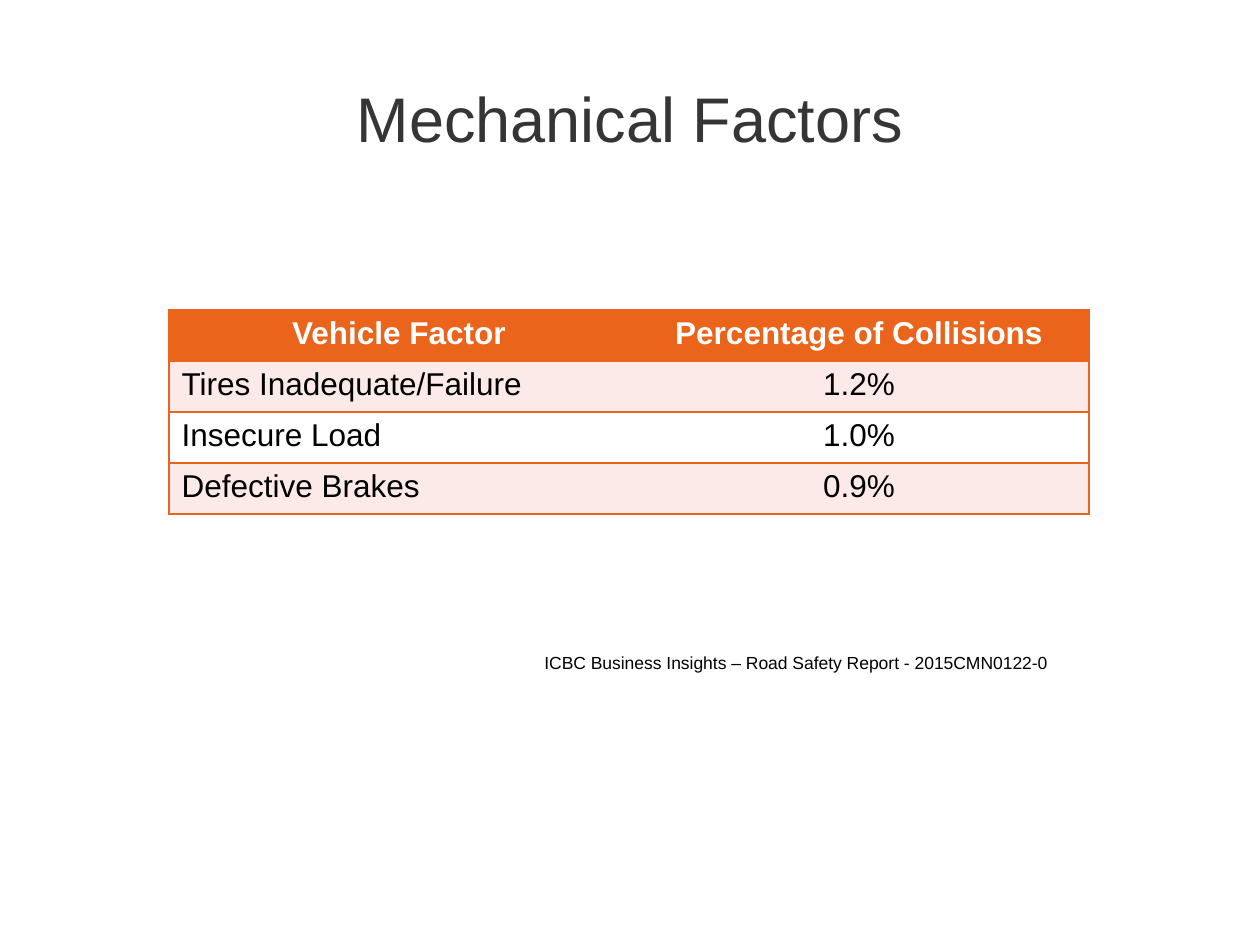
"""Build the Mechanical Factors slide with its collision table."""
from dataclasses import dataclass
from typing import NamedTuple

from lxml.etree import SubElement
from pptx import Presentation
from pptx.dml.color import RGBColor as Color
from pptx.enum.text import MSO_ANCHOR as Anchor, MSO_AUTO_SIZE as AutoSize, PP_ALIGN as Align
from pptx.oxml.ns import qn
from pptx.util import Emu, Pt

PIXELS_PER_INCH = 126


class Area(NamedTuple):
    left: int
    top: int
    width: int
    height: int


@dataclass(frozen=True)
class Theme:
    font: str = "Arial"
    title: str = "353535"
    accent: str = "EB641B"
    band: str = "FBEAE8"
    white: str = "FFFFFF"
    black: str = "000000"
    title_size: int = 36
    table_size: int = 18
    source_size: int = 10
    border: int = 1


@dataclass(frozen=True)
class Factor:
    name: str
    share: str


THEME = Theme()
HEADER = Factor("Vehicle Factor", "Percentage of Collisions")
FACTORS = [
    Factor("Tires Inadequate/Failure", "1.2%"),
    Factor("Insecure Load", "1.0%"),
    Factor("Defective Brakes", "0.9%"),
]
TITLE_AREA = Area(63, 38, 1134, 158)
TABLE_AREA = Area(169, 310, 920, 204)
SOURCE_AREA = Area(532, 646, 543, 34)


def px(length: int) -> Emu:
    return Emu(round(length * 914400 / PIXELS_PER_INCH))


def place(shape, area: Area) -> None:
    shape.left, shape.top, shape.width, shape.height = map(px, area)


def write(frame, text: str, size: int, color: str, align: Align, bold: bool = False) -> None:
    frame.text = text
    para = frame.paragraphs[0]
    para.alignment = align
    font = para.font
    font.name, font.size, font.bold = THEME.font, Pt(size), bold
    font.color.rgb = Color.from_string(color)


def add_borders(cell, visible: str) -> None:
    properties = cell._tc.get_or_add_tcPr()
    for side in "LRTB":
        line = SubElement(properties, qn(f"a:ln{side}"), w=str(Pt(THEME.border)))
        if side in visible:
            fill = SubElement(line, qn("a:solidFill"))
            SubElement(fill, qn("a:srgbClr"), val=THEME.accent)
        else:
            SubElement(line, qn("a:noFill"))


def fill_cell(cell, text: str, row: int, column: int) -> None:
    header = row == 0
    centred = header or column == 1
    write(cell.text_frame, text, THEME.table_size,
          THEME.white if header else THEME.black,
          Align.CENTER if centred else Align.LEFT, bold=header)
    add_borders(cell, "TB" + "LR"[column])
    cell.fill.solid()
    background = THEME.accent if header else THEME.band if row % 2 else THEME.white
    cell.fill.fore_color.rgb = Color.from_string(background)


def add_factor_table(page, area: Area) -> None:
    rows = [HEADER, *FACTORS]
    table = page.shapes.add_table(len(rows), 2, *map(px, area)).table
    for row, factor in enumerate(rows):
        for column, text in enumerate((factor.name, factor.share)):
            fill_cell(table.cell(row, column), text, row, column)


def add_source(page, text: str, area: Area) -> None:
    box = page.shapes.add_textbox(*map(px, area))
    frame = box.text_frame
    frame.word_wrap = True
    frame.auto_size = AutoSize.SHAPE_TO_FIT_TEXT
    write(frame, text, THEME.source_size, THEME.black, Align.LEFT)


def main() -> None:
    deck = Presentation()
    deck.slide_width, deck.slide_height = px(1260), px(945)
    page = deck.slides.add_slide(deck.slide_layouts[5])
    title = page.shapes.title
    place(title, TITLE_AREA)
    title.text_frame.vertical_anchor = Anchor.MIDDLE
    write(title.text_frame, "Mechanical Factors", THEME.title_size, THEME.title, Align.CENTER)
    add_factor_table(page, TABLE_AREA)
    add_source(page, "ICBC Business Insights – Road Safety Report - 2015CMN0122-0", SOURCE_AREA)
    deck.save("out.pptx")


if __name__ == "__main__":
    main()
